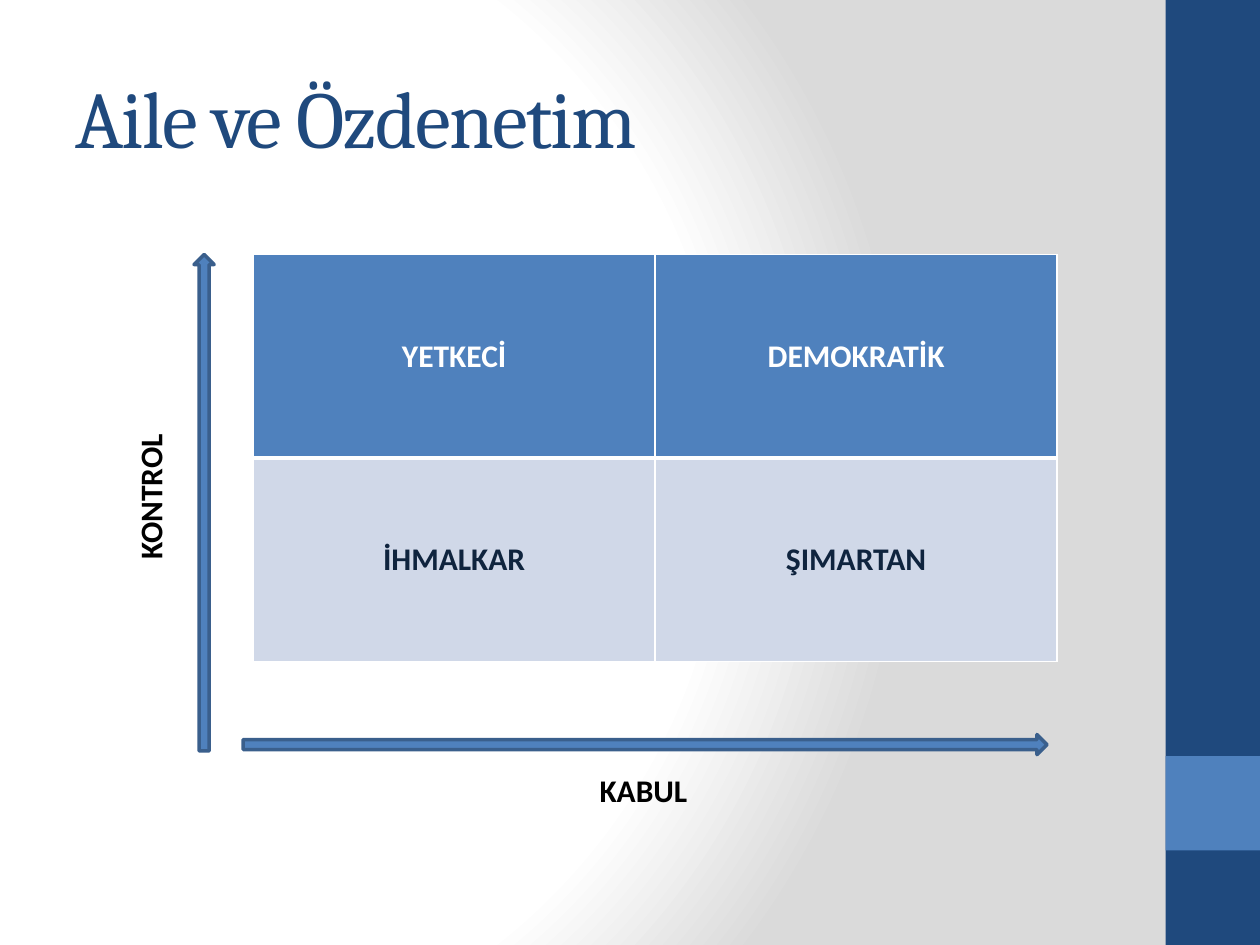
from dataclasses import dataclass

from lxml import etree
from pptx import Presentation
from pptx import util as u
from pptx.dml import color
from pptx.enum import shapes, text
from pptx.oxml import ns

NAVY, BLUE, PALE, WHITE = "1F497D", "4F81BD", "D0D8E8", "FFFFFF"
LABEL_FONT = {"name": "Calibri", "size": u.Pt(18), "bold": True}
TITLE_FONT = {"name": "Cambria", "size": u.Pt(46), "bold": False}


@dataclass
class Box:
    left: float
    top: float
    width: float
    height: float

    def lengths(self) -> list:
        return [u.Inches(v) for v in (self.left, self.top, self.width, self.height)]


@dataclass
class Block:
    preset: shapes.MSO_SHAPE
    box: Box
    fill: str
    outline: str = ""


@dataclass
class Label:
    wording: str
    box: Box
    ink: str
    font: dict
    frame: dict
    vert: str = "horz"
    spacing: int = 0


@dataclass
class Style:
    wording: str
    fill: str
    ink: str


def rgb(value: str) -> color.RGBColor:
    return color.RGBColor.from_string(value)


def add_xml(parent, tag: str, **attributes: str):
    return etree.SubElement(parent, ns.qn(tag), attributes)


def style_run(run, font: dict, ink: str) -> None:
    for name, value in font.items():
        setattr(run.font, name, value)
    run.font.color.rgb = rgb(ink)


def paint_background(slide) -> None:
    slide.background.fill.gradient()
    gradient = slide.element.find(".//" + ns.qn("a:gradFill"))
    for child in list(gradient):
        gradient.remove(child)
    stops = add_xml(gradient, "a:gsLst")
    for position, shade in ((0, WHITE), (75, WHITE), (100, "DADADA")):
        stop = add_xml(stops, "a:gs", pos=str(position * 1000))
        add_xml(stop, "a:srgbClr", val=shade)
    circle = add_xml(gradient, "a:path", path="circle")
    add_xml(circle, "a:fillToRect", l="20000", t="50000", r="100000", b="50000")


def draw_block(slide, block: Block) -> None:
    shape = slide.shapes.add_shape(block.preset, *block.box.lengths())
    shape.shadow.inherit = False
    shape.fill.solid()
    shape.fill.fore_color.rgb = rgb(block.fill)
    if block.outline:
        shape.line.color.rgb = rgb(block.outline)
        shape.line.width = u.Pt(2)
    else:
        shape.line.fill.background()


def draw_label(slide, label: Label) -> None:
    frame = slide.shapes.add_textbox(*label.box.lengths()).text_frame
    for name, value in label.frame.items():
        setattr(frame, name, value)
    frame._txBody.bodyPr.set("vert", label.vert)
    run = frame.paragraphs[0].add_run()
    run.text = label.wording
    style_run(run, label.font, label.ink)
    if label.spacing:
        run.font._element.set("spc", str(label.spacing))


def draw_borders(cell, widths: dict) -> None:
    properties = cell._tc.get_or_add_tcPr()
    for index, (side, width) in enumerate(widths.items()):
        border = etree.Element(ns.qn("a:ln" + side), {"w": str(u.Pt(width))})
        add_xml(add_xml(border, "a:solidFill"), "a:srgbClr", val=WHITE)
        properties.insert(index, border)


def draw_matrix(slide, box: Box, rows: list) -> None:
    table = slide.shapes.add_table(len(rows), len(rows[0]), *box.lengths()).table
    table.horz_banding = False
    for r, styles in enumerate(rows):
        for c, style in enumerate(styles):
            cell = table.cell(r, c)
            cell.fill.solid()
            cell.fill.fore_color.rgb = rgb(style.fill)
            cell.vertical_anchor = text.MSO_ANCHOR.MIDDLE
            paragraph = cell.text_frame.paragraphs[0]
            paragraph.alignment = text.PP_ALIGN.CENTER
            run = paragraph.add_run()
            run.text = style.wording
            style_run(run, LABEL_FONT, style.ink)
            is_header = r == 0
            draw_borders(cell, {"L": 1, "R": 1, "T": 1 if is_header else 3,
                                "B": 3 if is_header else 1})


def main() -> None:
    deck = Presentation()
    deck.slide_width, deck.slide_height = u.Inches(10), u.Inches(7.5)
    slide = deck.slides.add_slide(deck.slide_layouts[6])
    paint_background(slide)

    preset = shapes.MSO_SHAPE
    sidebar = Block(preset.RECTANGLE, Box(9.25, 0, 0.75, 7.5), NAVY)
    accent = Block(preset.RECTANGLE, Box(9.25, 6, 0.75, 0.75), BLUE)
    control_axis = Block(preset.UP_ARROW, Box(1.54, 2.02, 0.16, 3.94), BLUE, "3A5F8C")
    acceptance_axis = Block(preset.RIGHT_ARROW, Box(1.93, 5.83, 6.38, 0.16), BLUE, "3A5F8C")
    for block in (sidebar, accent, control_axis, acceptance_axis):
        draw_block(slide, block)

    draw_matrix(slide, Box(2.01, 2.02, 6.38, 3.23), [
        [Style(name, BLUE, WHITE) for name in ("YETKECİ", "DEMOKRATİK")],
        [Style(name, PALE, "0F243E") for name in ("İHMALKAR", "ŞIMARTAN")],
    ])

    title_frame = {"word_wrap": True, "vertical_anchor": text.MSO_ANCHOR.MIDDLE}
    axis_frame = {"word_wrap": False, "auto_size": text.MSO_AUTO_SIZE.SHAPE_TO_FIT_TEXT}
    for label in (
        Label("Aile ve Özdenetim", Box(0.5, 0.3, 8.33, 1.25), NAVY, TITLE_FONT,
              title_frame, spacing=-100),
        Label("KABUL", Box(4.66, 6.07, 0.91, 0.4), "000000", LABEL_FONT, axis_frame),
        Label("KONTROL", Box(0.99, 3.43, 0.5, 1.11), "000000", LABEL_FONT, axis_frame,
              vert="vert270"),
    ):
        draw_label(slide, label)

    deck.save("out.pptx")


if __name__ == "__main__":
    main()
